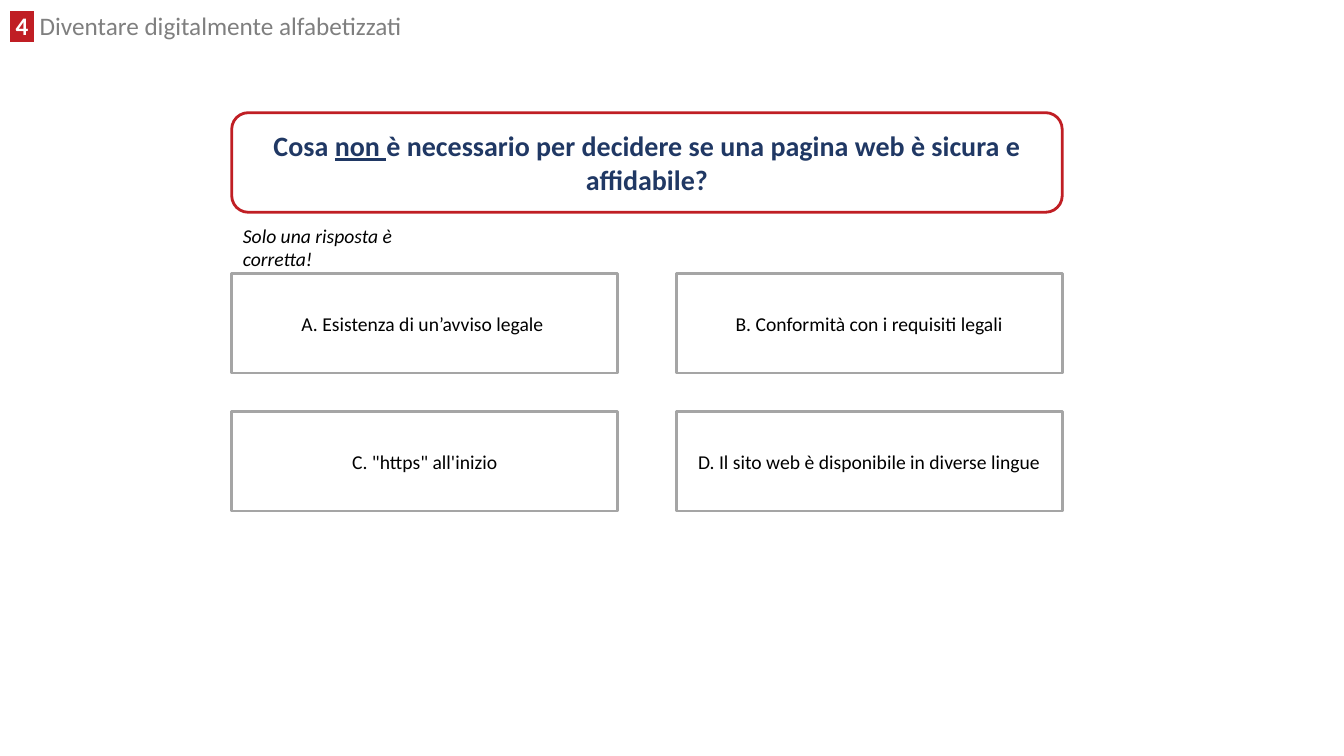
from lxml.etree import SubElement as Sub
from pptx import Presentation
from pptx.dml.color import RGBColor as Rgb
from pptx.enum.shapes import MSO_SHAPE as Shape
from pptx.enum.text import MSO_ANCHOR as Anchor, PP_ALIGN as Align
from pptx.oxml.ns import qn
from pptx.util import Cm, Pt

HUES = {"red": "C01E24", "navy": "203864", "gray": "7F7F7F",
        "edge": "A5A5A5", "white": "FFFFFF", "black": "000000"}


def add_run(para, text, size, hue, bold=False, under=False, slant=False):
    """Add one styled run to a paragraph."""
    run = para.add_run()
    run.text = text
    font = run.font
    font.name, font.size = "Calibri", Pt(size)
    font.bold, font.underline, font.italic = bold, under, slant
    font.color.rgb = Rgb.from_string(HUES[hue])
    return run


def mark(run, hue):
    """Put a highlight behind a run."""
    props = run.font._element
    light = Sub(props, qn("a:highlight"))
    Sub(light, qn("a:srgbClr"), val=HUES[hue])
    props.find(qn("a:solidFill")).addnext(light)


def add_label(slide, left, top, width, height):
    """Add a wrapping text box and return its paragraph."""
    frame = slide.shapes.add_textbox(Cm(left), Cm(top), Cm(width), Cm(height)).text_frame
    frame.word_wrap = True
    return frame.paragraphs[0]


def add_card(slide, kind, edge, left, top, width, height):
    """Add an outlined white card and return its centred paragraph."""
    card = slide.shapes.add_shape(kind, Cm(left), Cm(top), Cm(width), Cm(height))
    card.shadow.inherit = False
    card.fill.solid()
    card.fill.fore_color.rgb = Rgb.from_string(HUES["white"])
    card.line.color.rgb = Rgb.from_string(HUES[edge])
    card.line.width = Pt(2)
    frame = card.text_frame
    frame.word_wrap = True
    frame.vertical_anchor = Anchor.MIDDLE
    para = frame.paragraphs[0]
    para.alignment = Align.CENTER
    return para


def add_header(slide, box, number, title):
    """Place the numbered chapter title in its box."""
    para = add_label(slide, *box)
    para.line_spacing = 0.8
    mark(add_run(para, f" {number} ", 18, "white", bold=True), "red")
    add_run(para, f" {title}", 18, "gray")


def add_quiz(slide, box, ask, hint, picks):
    """Place the question, the hint and a two-column grid of answers."""
    left, top, width, height = box
    tall, gap_x, gap_y = 2.51, 1.47, 0.97
    wide = (width - gap_x) / 2
    para = add_card(slide, Shape.ROUNDED_RECTANGLE, "red", left, top, width, tall)
    for text, under in ask:
        add_run(para, text, 20, "navy", bold=True, under=under)
    first = top + height - 2 * tall - gap_y
    for i, pick in enumerate(picks):
        row, col = divmod(i, 2)
        para = add_card(slide, Shape.RECTANGLE, "edge", left + col * (wide + gap_x),
                        first + row * (tall + gap_y), wide, tall)
        add_run(para, f"{'ABCD'[i]}. {pick}", 14, "black")
    para = add_label(slide, left + 0.03, top + tall + 0.16, 6, 0.86)
    add_run(para, hint, 14, "black", slant=True)


def main():
    """Build and save the quiz slide."""
    deck = Presentation()
    deck.slide_width, deck.slide_height = Cm(33.87), Cm(19.05)
    slide = deck.slides.add_slide(deck.slide_layouts[6])
    add_header(slide, (0, 0.28, 24.18, 0.86), 4, "Diventare digitalmente alfabetizzati")
    add_quiz(slide, (5.84, 2.84, 20.93, 10.04),
             [("Cosa ", False), ("non ", True),
              ("è necessario per decidere se una pagina web è sicura e affidabile?", False)],
             "Solo una risposta è corretta!",
             ["Esistenza di un’avviso legale ", "Conformità con i requisiti legali",
              "\"https\" all'inizio", "Il sito web è disponibile in diverse lingue"])
    deck.save("out.pptx")


if __name__ == "__main__":
    main()
